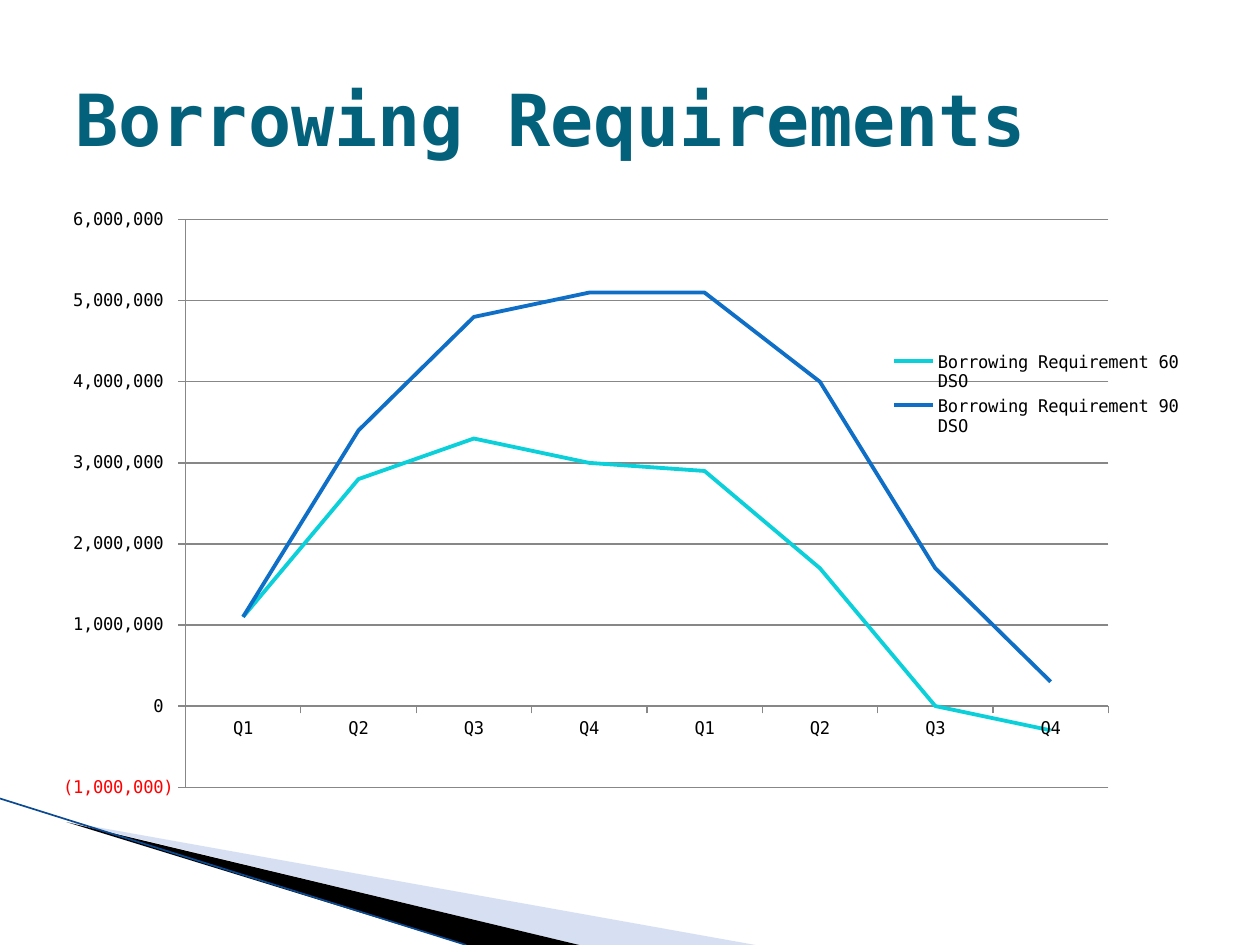
from lxml import etree
from pptx import Presentation
from pptx import util as u
from pptx.chart.data import CategoryChartData
from pptx.dml.color import RGBColor
from pptx.enum import chart as ch
from pptx.enum import shapes, text
from pptx.oxml import ns

TEAL = RGBColor(0x04, 0x61, 0x7B)
CYAN = RGBColor(0x0B, 0xD0, 0xD9)
BLUE = RGBColor(0x0F, 0x6F, 0xC6)
NAVY = RGBColor(0x0B, 0x4A, 0x91)
PALE = RGBColor(0x9D, 0xB2, 0xE1)
GREY = RGBColor(0x87, 0x87, 0x87)
BLACK = RGBColor(0, 0, 0)
FONT = "DejaVu Sans Mono"
WIDE, HIGH = 10, 7.5


def sub(node, tag, **attrs):
    return etree.SubElement(node, ns.qn(tag), attrs)


class Deck:
    """Holds the style and the current slide; lengths are shares of its size."""

    def __init__(self):
        self.prs = Presentation()
        self.prs.slide_width = u.Inches(WIDE)
        self.prs.slide_height = u.Inches(HIGH)
        self.slide = self.prs.slides.add_slide(self.prs.slide_layouts[6])
        self.shapes = self.slide.shapes

    def spot(self, x, y):
        return u.Inches(x * WIDE), u.Inches(y * HIGH)

    def style(self, font, size, color, bold=False):
        font.name, font.size, font.bold = FONT, u.Pt(size), bold
        font.color.rgb = color

    def wedge(self, points, color, alpha=None):
        start, *rest = [self.spot(*p) for p in points]
        pen = self.shapes.build_freeform(*start)
        pen.add_line_segments(rest, close=True)
        shape = pen.convert_to_shape()
        shape.shadow.inherit = False
        shape.fill.solid()
        shape.fill.fore_color.rgb = color
        shape.line.fill.background()
        if alpha:
            tint = shape.fill._xPr.find(".//" + ns.qn("a:srgbClr"))
            sub(tint, "a:alpha", val=str(alpha * 1000))

    def rule(self, start, end, color, width):
        line = self.shapes.add_connector(
            shapes.MSO_CONNECTOR.STRAIGHT, *self.spot(*start), *self.spot(*end))
        line.line.color.rgb = color
        line.line.width = u.Pt(width)
        sub(line._element.spPr, "a:effectLst")

    def title(self, words, at, size):
        frame = self.shapes.add_textbox(*self.spot(*at[:2]), *self.spot(*at[2:])).text_frame
        frame.word_wrap = True
        frame.vertical_anchor = text.MSO_ANCHOR.MIDDLE
        frame.text = words
        self.style(frame.paragraphs[0].runs[0].font, size, TEAL, True)

    def place(self, node, index, box, inner=False):
        for old in node.findall(ns.qn("c:layout")):
            node.remove(old)
        layout = etree.Element(ns.qn("c:layout"))
        node.insert(index, layout)
        manual = sub(layout, "c:manualLayout")
        if inner:
            sub(manual, "c:layoutTarget", val="inner")
        for side in "xy":
            sub(manual, f"c:{side}Mode", val="edge")
        for side, share in zip("xywh", box):
            sub(manual, f"c:{side}", val=str(share))

    def graph(self, cats, rows, at, plot, key):
        data = CategoryChartData()
        data.categories = cats
        for name, vals, _ in rows:
            data.add_series(name, [v * 100000 for v in vals])
        chart = self.shapes.add_chart(
            ch.XL_CHART_TYPE.LINE, *self.spot(*at[:2]), *self.spot(*at[2:]), data).chart
        chart.has_title = False
        self.style(chart.font, 10, BLACK)
        for series, (_, _, color) in zip(chart.series, rows):
            series.smooth = False
            series.marker.style = ch.XL_MARKER_STYLE.NONE
            series.format.line.color.rgb = color
            series.format.line.width = u.Pt(2.25)
        chart.plots[0].vary_by_categories = False
        axis = chart.value_axis
        for each in (axis, chart.category_axis):
            each.major_tick_mark = ch.XL_TICK_MARK.OUTSIDE
            each.minor_tick_mark = ch.XL_TICK_MARK.NONE
            each.format.line.color.rgb = GREY
        axis.minimum_scale, axis.maximum_scale, axis.major_unit = -1e6, 6e6, 1e6
        axis.has_major_gridlines = True
        axis.major_gridlines.format.line.color.rgb = GREY
        axis.tick_labels.number_format = r"#,##0_);[Red]\(#,##0\)"
        axis.tick_labels.number_format_is_linked = False
        chart.has_legend = True
        chart.legend.position = ch.XL_LEGEND_POSITION.RIGHT
        chart.legend.include_in_layout = False
        self.place(chart._chartSpace.chart.plotArea, 0, plot, True)
        self.place(chart.legend._element, 1, key)


def main():
    deck = Deck()
    deck.wedge([(0.055, 0.87), (0.6, 1), (0.46, 1)], PALE, 40)
    deck.wedge([(0.053, 0.87), (0.46, 1), (0.37, 1)], BLACK)
    deck.rule((0, 0.845), (0.37, 1), NAVY, 0.95)
    deck.title("Borrowing Requirements", (0.05, 0.04, 0.9, 0.17), 41)
    deck.graph(
        ["Q1", "Q2", "Q3", "Q4"] * 2,
        [("Borrowing Requirement 60 DSO", [11, 28, 33, 30, 29, 17, 0, -3], CYAN),
         ("Borrowing Requirement 90 DSO", [11, 34, 48, 51, 51, 40, 17, 3], BLUE)],
        at=(0.05, 0.216, 0.9, 0.66),
        plot=(0.086, 0.025, 0.834, 0.91),
        key=(0.72, 0.23, 0.27, 0.15))
    deck.prs.save("out.pptx")


if __name__ == "__main__":
    main()
